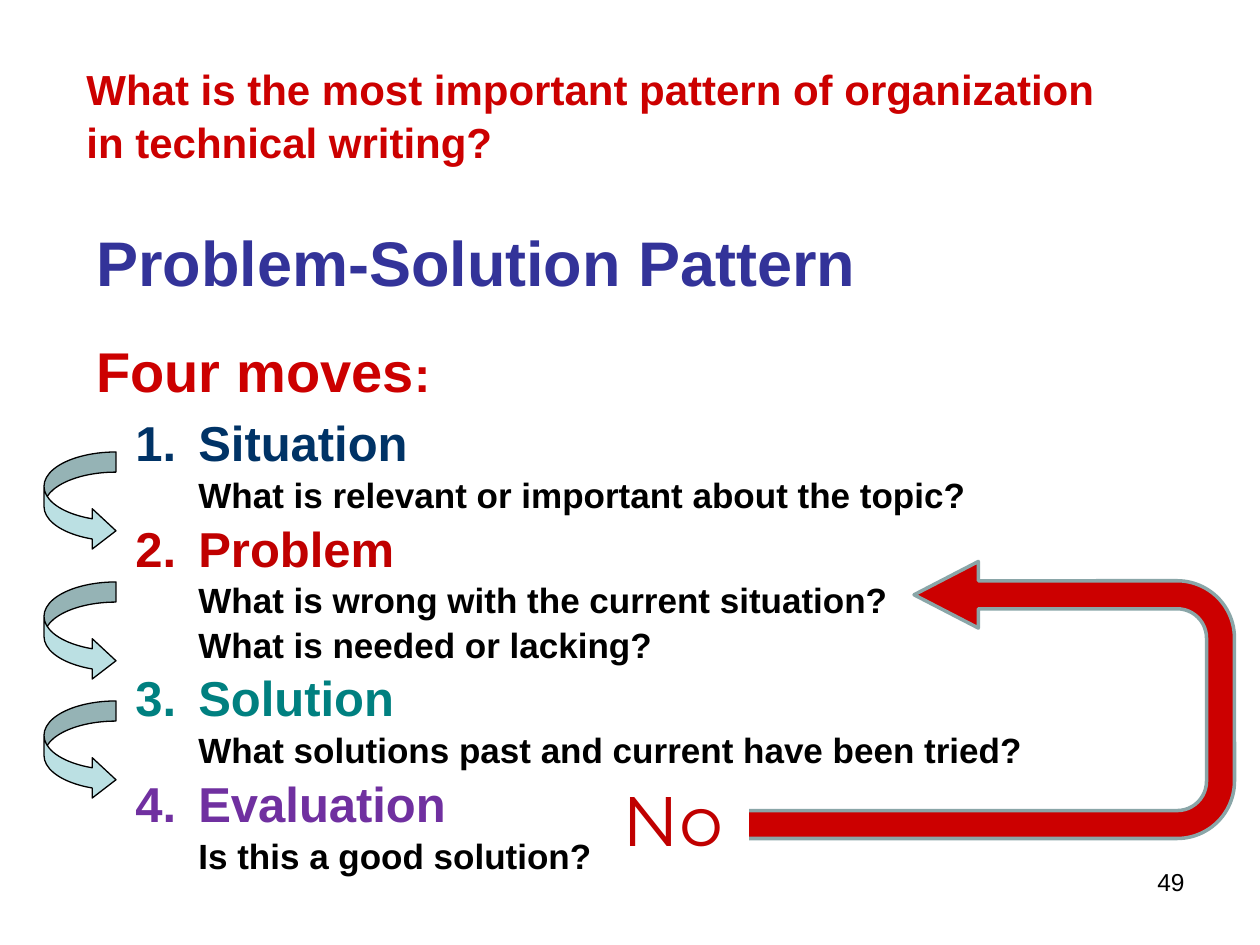
from dataclasses import dataclass

from lxml import etree
from pptx import Presentation
from pptx import util as u
from pptx.dml.color import RGBColor
from pptx.enum import shapes, text
from pptx.oxml.ns import qn

EMU_PER_PX = 914400 / 126


@dataclass(frozen=True)
class Theme:
    """Colours, fonts and type sizes of the slide."""
    red: str = "CC0000"
    blue: str = "333399"
    navy: str = "003366"
    crimson: str = "C00000"
    teal: str = "008080"
    purple: str = "7030A0"
    black: str = "000000"
    white: str = "FFFFFF"
    pale: str = "BBE0E3"
    edge: str = "8AA6A8"
    font: str = "Arial"
    answer_font: str = "Montserrat"
    question_size: int = 24
    pattern_size: int = 36
    moves_size: int = 32
    move_size: int = 28
    detail_size: int = 20
    answer_size: int = 40
    number_size: int = 14


THEME = Theme()

MOVES = [
    ("Situation", THEME.navy, ["What is relevant or important about the topic?"]),
    ("Problem", THEME.crimson, ["What is wrong with the current situation?",
                                "What is needed or lacking?"]),
    ("Solution", THEME.teal, ["What solutions past and current have been tried?"]),
    ("Evaluation", THEME.purple, ["Is this a good solution?"]),
]


def px(*lengths):
    """Turn pixel lengths into EMU."""
    return [u.Emu(round(length * EMU_PER_PX)) for length in lengths]


def write(paragraph, words, size, color, bold=True, font=THEME.font):
    """Append formatted words to a paragraph."""
    run = paragraph.add_run()
    run.text = words
    run.font.size = u.Pt(size)
    run.font.bold = bold
    run.font.name = font
    run.font.color.rgb = RGBColor.from_string(color)


def add_text_frame(slide, box):
    """Add a wrapping text box and return its frame."""
    frame = slide.shapes.add_textbox(*px(*box)).text_frame
    frame.word_wrap = True
    return frame


def add_shape(slide, preset, box, fill, edge=None, width=0, adjustments=()):
    """Add a flat preset shape with an optional outline."""
    shape = slide.shapes.add_shape(preset, *px(*box))
    shape.shadow.inherit = False
    shape.fill.solid()
    shape.fill.fore_color.rgb = RGBColor.from_string(fill)
    if edge:
        shape.line.color.rgb = RGBColor.from_string(edge)
        shape.line.width = u.Pt(width)
    else:
        shape.line.fill.background()
    for index, value in enumerate(adjustments):
        shape.adjustments[index] = value
    return shape


def number_paragraph(paragraph):
    """Give a paragraph an automatic number and a hanging indent."""
    properties = paragraph._p.get_or_add_pPr()
    hang = px(63)[0]
    properties.set("marL", str(hang))
    properties.set("indent", str(-hang))
    etree.SubElement(properties, qn("a:buFont"), typeface="+mj-lt")
    etree.SubElement(properties, qn("a:buAutoNum"), type="arabicPeriod")


def add_question(slide):
    """Add the question at the top."""
    question = add_text_frame(slide, (74, 55, 1042, 115)).paragraphs[0]
    question.line_spacing = 1.05
    write(question, "What is the most important pattern of organization in technical writing?",
          THEME.question_size, THEME.red)


def add_heading(slide):
    """Add the pattern name and the lead-in to the moves."""
    frame = add_text_frame(slide, (84, 214, 1002, 189))
    pattern, lead_in = frame.paragraphs[0], frame.add_paragraph()
    pattern.line_spacing = lead_in.line_spacing = 1.05
    lead_in.space_before = u.Pt(19)
    write(pattern, "Problem-Solution Pattern", THEME.pattern_size, THEME.blue)
    write(lead_in, "Four moves", THEME.moves_size, THEME.red)
    write(lead_in, ":", THEME.move_size, THEME.red)


def add_moves(slide):
    """Add the numbered moves with their questions."""
    frame = add_text_frame(slide, (123, 403, 1032, 459))
    for index, (name, color, details) in enumerate(MOVES):
        move = frame.add_paragraph() if index else frame.paragraphs[0]
        number_paragraph(move)
        move.line_spacing = 1.05
        move.font.size = u.Pt(THEME.move_size)
        move.font.bold = True
        write(move, name, THEME.move_size, color)
        for detail in details:
            move.add_line_break()
            write(move, detail, THEME.detail_size, THEME.black)


def add_step_arrows(slide):
    """Add the curved arrows leading from move to move."""
    for top in (452, 582, 701):
        add_shape(slide, shapes.MSO_SHAPE.CURVED_RIGHT_ARROW, (44, top, 72, 99),
                  THEME.pale, THEME.black, 0.75, (0.28, 0.56, 0.33))


def add_return_loop(slide):
    """Add the arrow from the evaluation back to the problem, with its answer."""
    loop = add_shape(slide, shapes.MSO_SHAPE.U_TURN_ARROW, (848, 452, 277, 496),
                     THEME.red, THEME.edge, 2, (0.101, 0.12, 0.232, 0.207, 0.646))
    loop.rotation = 90
    loop._element.spPr.find(qn("a:xfrm")).set("flipH", "1")

    answer = add_shape(slide, shapes.MSO_SHAPE.RECTANGLE, (610, 770, 139, 97), THEME.white)
    answer.text_frame.vertical_anchor = text.MSO_ANCHOR.TOP
    reply = answer.text_frame.paragraphs[0]
    reply.alignment = text.PP_ALIGN.LEFT
    write(reply, "No", THEME.answer_size, THEME.crimson, bold=False, font=THEME.answer_font)


def add_page_number(slide):
    """Add the page number at the lower right."""
    number = add_text_frame(slide, (903, 861, 294, 66)).paragraphs[0]
    number.alignment = text.PP_ALIGN.RIGHT
    write(number, "49", THEME.number_size, THEME.black, bold=False)


def main():
    """Build and save the slide."""
    deck = Presentation()
    deck.slide_width, deck.slide_height = px(1260, 945)
    slide = deck.slides.add_slide(deck.slide_layouts[6])
    add_page_number(slide)
    add_question(slide)
    add_heading(slide)
    add_moves(slide)
    add_step_arrows(slide)
    add_return_loop(slide)
    deck.save("out.pptx")


if __name__ == "__main__":
    main()
